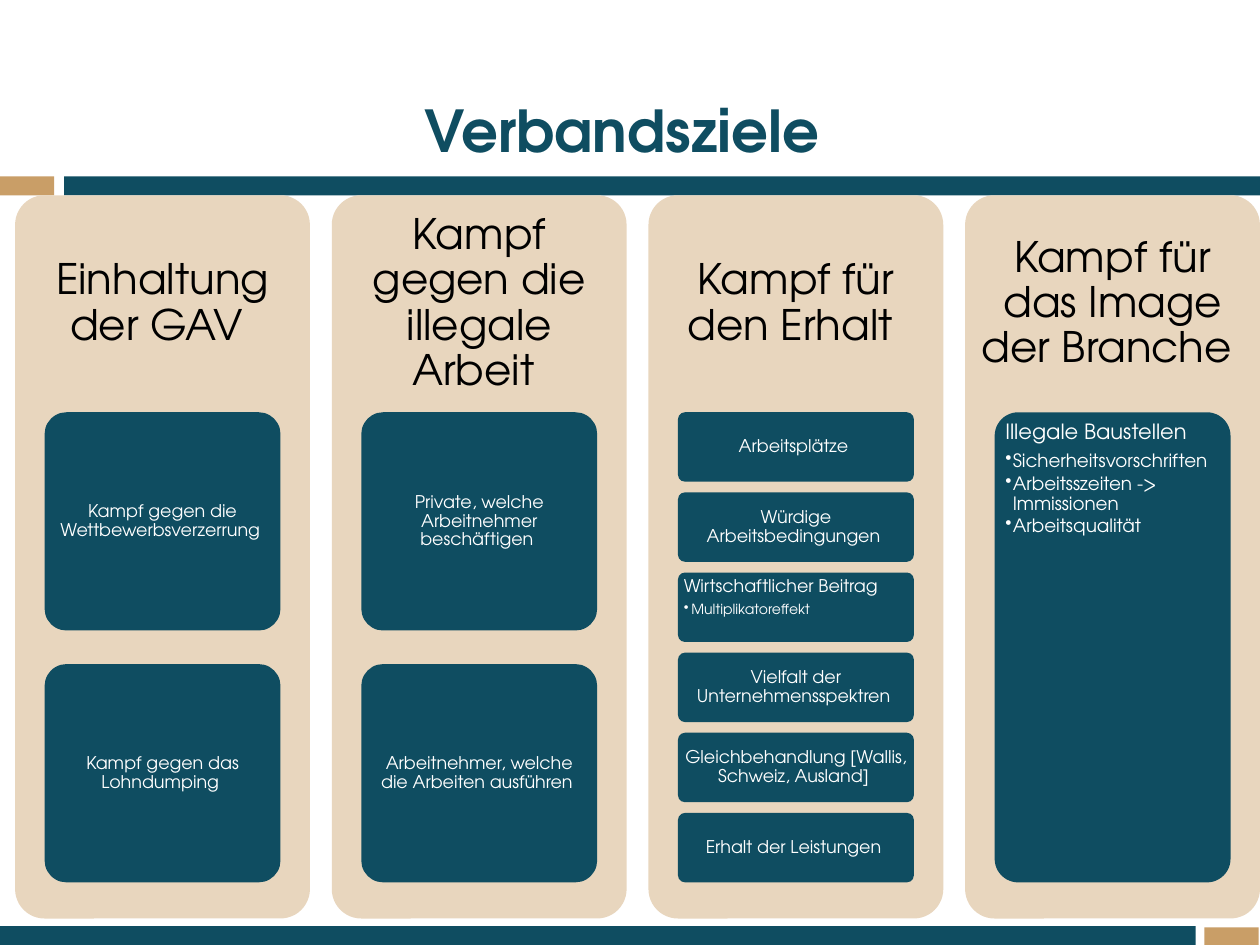
from dataclasses import dataclass

from lxml.etree import SubElement
from pptx import Presentation
from pptx.dml.color import RGBColor
from pptx.enum.shapes import MSO_SHAPE as Shape
from pptx.enum.text import MSO_ANCHOR as Anchor, PP_ALIGN as Align
from pptx.oxml.ns import qn
from pptx.util import Inches, Pt


@dataclass(frozen=True)
class Theme:
    """Colours, font and type sizes of the slide."""
    font: str = "TeX Gyre Adventor"
    teal: str = "0F4D61"
    gold: str = "C99E67"
    sand: str = "E8D6BE"
    black: str = "000000"
    white: str = "FFFFFF"
    title: float = 33
    heading: float = 24
    card: float = 10
    sub: float = 8
    lead: float = 12
    lead_sub: float = 10.5


@dataclass(frozen=True)
class Card:
    """One goal with optional bullet points."""
    text: str
    points: tuple = ()
    size: float = Theme.card
    point_size: float = Theme.sub


THEME = Theme()
COLUMNS = [
    ("Einhaltung der GAV ", [
        Card("Kampf gegen die Wettbewerbsverzerrung "),
        Card("Kampf gegen das Lohndumping ")]),
    ("Kampf gegen die illegale Arbeit ", [
        Card("Private, welche Arbeitnehmer beschäftigen "),
        Card("Arbeitnehmer, welche die Arbeiten ausführen ")]),
    ("Kampf für den Erhalt ", [
        Card("Arbeitsplätze "),
        Card("Würdige Arbeitsbedingungen "),
        Card("Wirtschaftlicher Beitrag", ("Multiplikatoreffekt",)),
        Card("Vielfalt der Unternehmensspektren "),
        Card("Gleichbehandlung [Wallis, Schweiz, Ausland] "),
        Card("Erhalt der Leistungen ")]),
    ("Kampf für das Image der Branche ", [
        Card("Illegale Baustellen",
             ("Sicherheitsvorschriften", "Arbeitsszeiten -> Immissionen",
              "Arbeitsqualität"), THEME.lead, THEME.lead_sub)]),
]


def set_frame(frame, anchor, across, down):
    """Set wrapping, anchor and margins of a text frame."""
    frame.word_wrap = True
    frame.vertical_anchor = anchor
    frame.margin_left = frame.margin_right = Inches(across)
    frame.margin_top = frame.margin_bottom = Inches(down)


def write(para, text, *, size, color, align=Align.CENTER, bold=False,
          after=0.0, bullet=False):
    """Write one formatted paragraph."""
    para.alignment = align
    para.line_spacing = 0.9
    para.space_after = Pt(round(size * after, 1))
    if bullet:
        para.level = 1
        props = para._p.get_or_add_pPr()
        props.set("marL", str(Inches(0.06)))
        props.set("indent", str(-Inches(0.06)))
        SubElement(props, qn("a:buChar")).set("char", "•")
    span = para.add_run()
    span.text = text
    span.font.name = THEME.font
    span.font.size = Pt(size)
    span.font.bold = bold
    span.font.color.rgb = RGBColor.from_string(color)


def add_block(page, kind, box, color):
    """Add a plain filled shape."""
    shape = page.shapes.add_shape(kind, *map(Inches, box))
    shape.shadow.inherit = False
    shape.fill.solid()
    shape.fill.fore_color.rgb = RGBColor.from_string(color)
    shape.line.fill.background()
    if kind == Shape.ROUNDED_RECTANGLE:
        shape.adjustments[0] = 0.1
    return shape


def add_bars(page):
    """Add the teal and gold bars above and below the columns."""
    for left, top, width, color in (
            (0.51, 1.4, 9.49, THEME.teal), (0, 1.4, 0.43, THEME.gold),
            (0, 7.35, 9.49, THEME.teal), (9.56, 7.36, 0.43, THEME.gold)):
        add_block(page, Shape.RECTANGLE, (left, top, width, 0.15), color)


def add_title(page, box, text):
    """Place and format the title placeholder."""
    title = page.shapes.title
    title.left, title.top, title.width, title.height = map(Inches, box)
    set_frame(title.text_frame, Anchor.MIDDLE, 0.1, 0.05)
    write(title.text_frame.paragraphs[0], text, size=THEME.title,
          color=THEME.teal, bold=True)


def add_card(page, box, card):
    """Add one card, top-left aligned when it has bullet points."""
    frame = add_block(page, Shape.ROUNDED_RECTANGLE, box, THEME.teal).text_frame
    set_frame(frame, Anchor.TOP if card.points else Anchor.MIDDLE, 0.03, 0.02)
    align = Align.LEFT if card.points else Align.CENTER
    write(frame.paragraphs[0], card.text, size=card.size, color=THEME.white,
          align=align, after=0.35)
    for point in card.points:
        write(frame.add_paragraph(), point, size=card.point_size,
              color=THEME.white, align=align, after=0.15, bullet=True)


def add_column(page, box, heading, cards):
    """Add a panel with its heading and evenly stacked cards."""
    left, top, width, height = box
    add_block(page, Shape.ROUNDED_RECTANGLE, box, THEME.sand)
    head = page.shapes.add_textbox(
        *map(Inches, (left, top, width, height * 0.3))).text_frame
    set_frame(head, Anchor.MIDDLE, 0.1, 0.1)
    write(head.paragraphs[0], heading, size=THEME.heading, color=THEME.black)
    gap_ratio = 0.154
    count = len(cards)
    card_height = height * 0.65 / (count + (count - 1) * gap_ratio)
    for index, card in enumerate(cards):
        card_top = top + height * 0.3 + index * card_height * (1 + gap_ratio)
        add_card(page, (left + width * 0.1, card_top, width * 0.8, card_height),
                 card)


def main():
    """Build and save the slide."""
    deck = Presentation()
    deck.slide_width, deck.slide_height = Inches(10), Inches(7.5)
    page = deck.slides.add_slide(deck.slide_layouts[5])
    add_bars(page)
    add_title(page, (0, 0.57, 10, 0.98), "Verbandsziele ")
    first, last, width = 0.12, 7.66, 2.34
    pitch = (last - first) / (len(COLUMNS) - 1)
    for index, (heading, cards) in enumerate(COLUMNS):
        add_column(page, (first + index * pitch, 1.55, width, 5.74),
                   heading, cards)
    deck.save("out.pptx")


if __name__ == "__main__":
    main()
